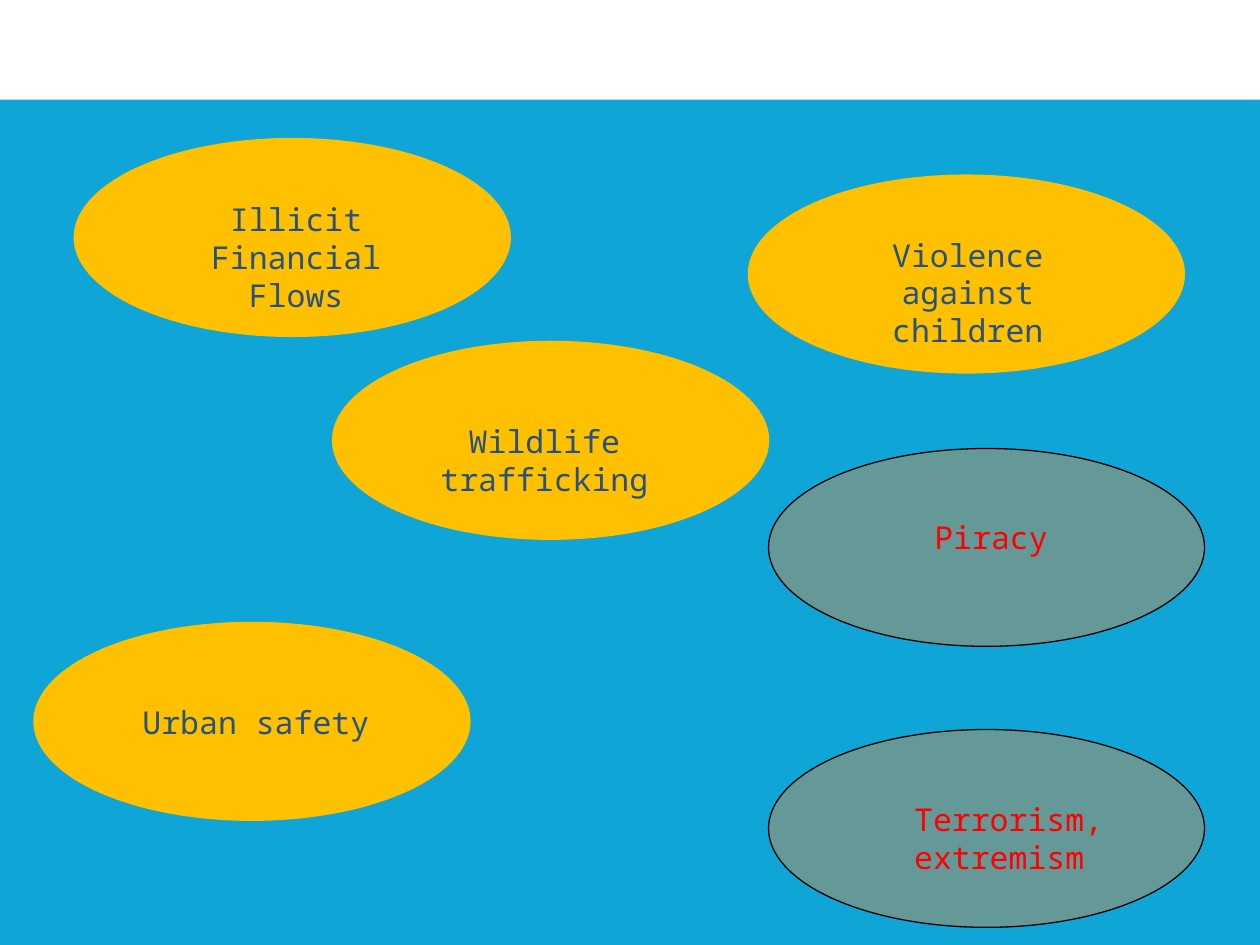
from lxml import etree
from pptx import Presentation
from pptx import util as u
from pptx.dml.color import RGBColor
from pptx.enum import shapes, text
from pptx.oxml.ns import qn

COLORS = {
    "background": "0FA6D7",
    "band": "FFFFFF",
    "topic": "FFC000",
    "topic_text": "27527F",
    "threat": "AE8F62",
    "threat_line": "000000",
    "threat_text": "FF0000",
}
OVAL_SIZE = (3.46, 1.57)
TOPIC_WIDTH = 2.28
THREAT_WIDTH = 3.15

TOPICS = [
    ("Violence against children", (5.94, 1.39), (6.54, 1.82), 0.71),
    ("Illicit Financial Flows", (0.59, 1.1), (1.21, 1.54), 0.71),
    ("Urban safety", (0.27, 4.94), (0.89, 5.53), 0.4),
    ("Wildlife trafficking", (2.64, 2.71), (3.18, 3.3), 0.4),
]
THREATS = [
    ("Piracy", (6.1, 3.56), (6.29, 4.06), 0.4),
    ("Terrorism, extremism ", (6.1, 5.79), (6.43, 6.3), 0.4),
]


class SlideBuilder:
    font_name = "Noto Sans Mono"
    font_size = u.Pt(18)
    line_width = u.Pt(0.75)

    def __init__(self, slide):
        self.slide = slide

    def color(self, name):
        return RGBColor.from_string(COLORS[name])

    def background(self, name):
        fill = self.slide.background.fill
        fill.solid()
        fill.fore_color.rgb = self.color(name)

    def shape(self, kind, position, size, fill, line=None, opacity=100):
        shape = self.slide.shapes.add_shape(kind, *map(u.Inches, position + size))
        shape.shadow.inherit = False
        shape.fill.solid()
        shape.fill.fore_color.rgb = self.color(fill)
        if opacity < 100:
            color = shape.fill._xPr.find(qn("a:solidFill"))[0]
            etree.SubElement(color, qn("a:alpha"), val=str(opacity * 1000))
        if line:
            shape.line.color.rgb = self.color(line)
            shape.line.width = self.line_width
        else:
            shape.line.fill.background()

    def oval(self, position, fill, line, opacity=100):
        self.shape(shapes.MSO_SHAPE.OVAL, position, OVAL_SIZE, fill, line, opacity)

    def label(self, wording, position, size, color):
        box = self.slide.shapes.add_textbox(*map(u.Inches, position + size))
        text_frame = box.text_frame
        text_frame.word_wrap = True
        text_frame.auto_size = text.MSO_AUTO_SIZE.SHAPE_TO_FIT_TEXT
        text_frame.text = wording
        paragraph = text_frame.paragraphs[0]
        paragraph.alignment = text.PP_ALIGN.CENTER
        font = paragraph.runs[0].font
        font.name = self.font_name
        font.size = self.font_size
        font.color.rgb = self.color(color)


def main():
    presentation = Presentation()
    presentation.slide_width = u.Inches(10)
    presentation.slide_height = u.Inches(7.5)
    builder = SlideBuilder(presentation.slides.add_slide(presentation.slide_layouts[6]))

    builder.background("background")
    builder.shape(shapes.MSO_SHAPE.RECTANGLE, (0, 0), (10, 0.79), "band")
    for wording, oval_at, label_at, height in THREATS:
        builder.oval(oval_at, "threat", "threat_line", opacity=54)
        builder.label(wording, label_at, (THREAT_WIDTH, height), "threat_text")
    for wording, oval_at, label_at, height in TOPICS:
        builder.oval(oval_at, "topic", "topic")
        builder.label(wording, label_at, (TOPIC_WIDTH, height), "topic_text")

    presentation.save("out.pptx")


if __name__ == "__main__":
    main()
